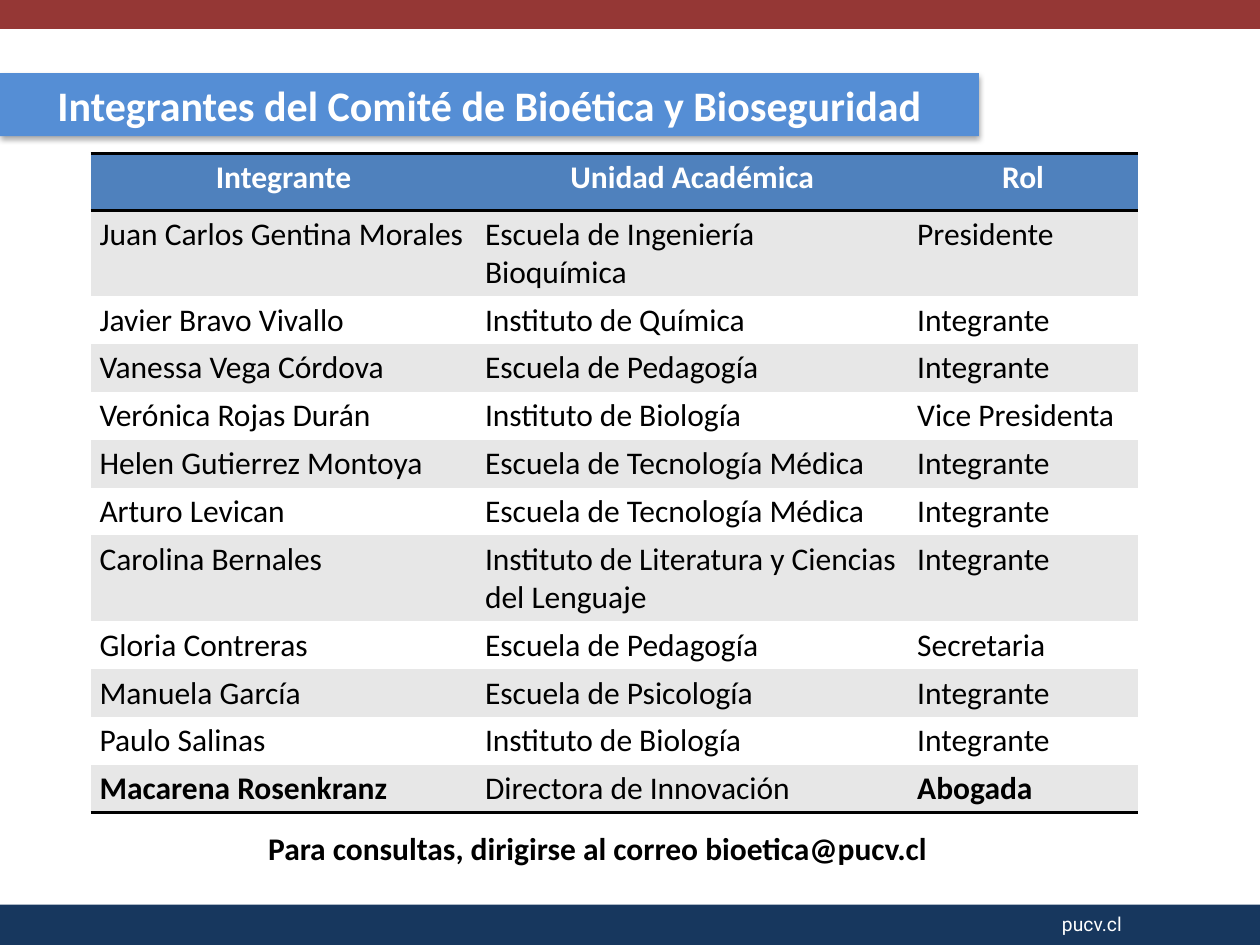
from typing import NamedTuple

from lxml import etree
from pptx import Presentation
from pptx.dml.color import RGBColor
from pptx.enum.shapes import MSO_SHAPE
from pptx.enum.text import MSO_ANCHOR, PP_ALIGN
from pptx.oxml import parse_xml
from pptx.oxml.ns import nsdecls, qn
from pptx.util import Inches, Pt

RECTANGLE = MSO_SHAPE.RECTANGLE
MIDDLE = MSO_ANCHOR.MIDDLE
CENTER = PP_ALIGN.CENTER
LEFT = PP_ALIGN.LEFT

COLORS = {
    "navy": "17375E",
    "red": "953735",
    "banner": "558ED5",
    "header": "4F81BD",
    "band": "E7E7E7",
    "white": "FFFFFF",
    "black": "000000",
}
NO_STYLE_NO_GRID = "{2D5ABB26-0587-4C30-8999-92F81FD0307C}"
COLUMN_WIDTHS = (3.06, 3.43, 1.82)
HEADER_HEIGHT, FIRST_ROW_HEIGHT, ROW_HEIGHT = 0.45, 0.59, 0.31


class Box(NamedTuple):
    left: float
    top: float
    width: float
    height: float


class TextStyle(NamedTuple):
    size: int
    color: str
    bold: bool = False
    align: PP_ALIGN = LEFT
    font: str = "Calibri"


class Member(NamedTuple):
    name: str
    unit: str
    role: str = "Integrante"
    highlighted: bool = False


MEMBERS = (
    Member("Juan Carlos Gentina Morales", "Escuela de Ingeniería Bioquímica", "Presidente"),
    Member("Javier Bravo Vivallo", "Instituto de Química"),
    Member("Vanessa Vega Córdova", "Escuela de Pedagogía"),
    Member("Verónica Rojas Durán", "Instituto de Biología", "Vice Presidenta"),
    Member("Helen Gutierrez Montoya", "Escuela de Tecnología Médica"),
    Member("Arturo Levican", "Escuela de Tecnología Médica"),
    Member("Carolina Bernales", "Instituto de Literatura y Ciencias del Lenguaje"),
    Member("Gloria Contreras", "Escuela de Pedagogía", "Secretaria"),
    Member("Manuela García", "Escuela de Psicología"),
    Member("Paulo Salinas", "Instituto de Biología"),
    Member("Macarena Rosenkranz", "Directora de Innovación", "Abogada", True),
)


def rgb(color: str) -> RGBColor:
    return RGBColor.from_string(COLORS[color])


def paint(target, color: str) -> None:
    target.fill.solid()
    target.fill.fore_color.rgb = rgb(color)


def write(frame, text: str, style: TextStyle) -> None:
    frame.text = text
    para = frame.paragraphs[0]
    para.alignment = style.align
    para.font.name = style.font
    para.font.size = Pt(style.size)
    para.font.bold = style.bold
    para.font.color.rgb = rgb(style.color)


def add_bar(page, box: Box, color: str) -> None:
    bar = page.shapes.add_shape(RECTANGLE, *map(Inches, box))
    bar.shadow.inherit = False
    paint(bar, color)
    bar.line.fill.background()


def add_label(page, box: Box, text: str, style: TextStyle) -> None:
    label = page.shapes.add_textbox(*map(Inches, box))
    label.text_frame.word_wrap = True
    write(label.text_frame, text, style)


def add_shadow(shape) -> None:
    shape._element.spPr.append(parse_xml(
        f'<a:effectLst {nsdecls("a")}>'
        '<a:outerShdw blurRad="40000" dist="23000" dir="5400000" rotWithShape="0">'
        f'<a:srgbClr val="{COLORS["black"]}"><a:alpha val="35000"/></a:srgbClr>'
        '</a:outerShdw></a:effectLst>'))


def place_title(page, box: Box, text: str) -> None:
    title = page.shapes.title
    title.left, title.top, title.width, title.height = map(Inches, box)
    paint(title, "banner")
    add_shadow(title)
    title.text_frame.vertical_anchor = MIDDLE
    write(title.text_frame, text, TextStyle(24, "white", True, CENTER))


def add_border(cell, side: str) -> None:
    properties = cell._tc.get_or_add_tcPr()
    line = etree.SubElement(properties, qn(f"a:{side}"), w=str(Pt(2)))
    fill = etree.SubElement(line, qn("a:solidFill"))
    etree.SubElement(fill, qn("a:srgbClr"), val=COLORS["black"])


def fill_cell(cell, text: str, style: TextStyle, color: str, borders: tuple[str, ...]) -> None:
    cell.margin_left = cell.margin_right = Inches(0.07)
    cell.margin_top = cell.margin_bottom = Inches(0.04)
    for side in borders:
        add_border(cell, side)
    paint(cell, color)
    write(cell.text_frame, text, style)


def add_member_table(page, box: Box) -> None:
    frame = page.shapes.add_table(len(MEMBERS) + 1, len(COLUMN_WIDTHS), *map(Inches, box))
    table = frame.table
    table.first_row = table.horz_banding = False
    table._tbl.tblPr.find(qn("a:tableStyleId")).text = NO_STYLE_NO_GRID
    for column, width in zip(table.columns, COLUMN_WIDTHS):
        column.width = Inches(width)
    heights = [HEADER_HEIGHT, FIRST_ROW_HEIGHT] + [ROW_HEIGHT] * (len(MEMBERS) - 1)
    for row, height in zip(table.rows, heights):
        row.height = Inches(height)
    frame.height = Inches(box.height)

    header_style = TextStyle(18, "white", True, CENTER)
    for column, heading in enumerate(("Integrante", "Unidad Académica", "Rol")):
        fill_cell(table.cell(0, column), heading, header_style, "header", ("lnT", "lnB"))
    for row, member in enumerate(MEMBERS, start=1):
        color = "band" if row % 2 else "white"
        borders = ("lnB",) if row == len(MEMBERS) else ()
        plain = TextStyle(18, "black")
        strong = plain._replace(bold=member.highlighted)
        entries = ((member.name, strong), (member.unit, plain), (member.role, strong))
        for column, (text, style) in enumerate(entries):
            fill_cell(table.cell(row, column), text, style, color, borders)


def main() -> None:
    deck = Presentation()
    deck.slide_width, deck.slide_height = Inches(10), Inches(7.5)
    page = deck.slides.add_slide(deck.slide_layouts.get_by_name("Title Only"))
    add_bar(page, Box(0, 7.18, 10, 0.32), "navy")
    add_label(page, Box(8.33, 7.19, 2.41, 0.72), "pucv.cl",
              TextStyle(11, "white", font="Roboto"))
    add_bar(page, Box(0, 0, 10, 0.23), "red")
    place_title(page, Box(0, 0.58, 7.77, 0.5),
                "Integrantes del Comité de Bioética y Bioseguridad")
    add_member_table(page, Box(0.72, 1.22, 8.31, 5.17))
    add_label(page, Box(2.03, 6.53, 5.63, 0.4),
              "Para consultas, dirigirse al correo bioetica@pucv.cl",
              TextStyle(18, "black", True))
    deck.save("out.pptx")


if __name__ == "__main__":
    main()
